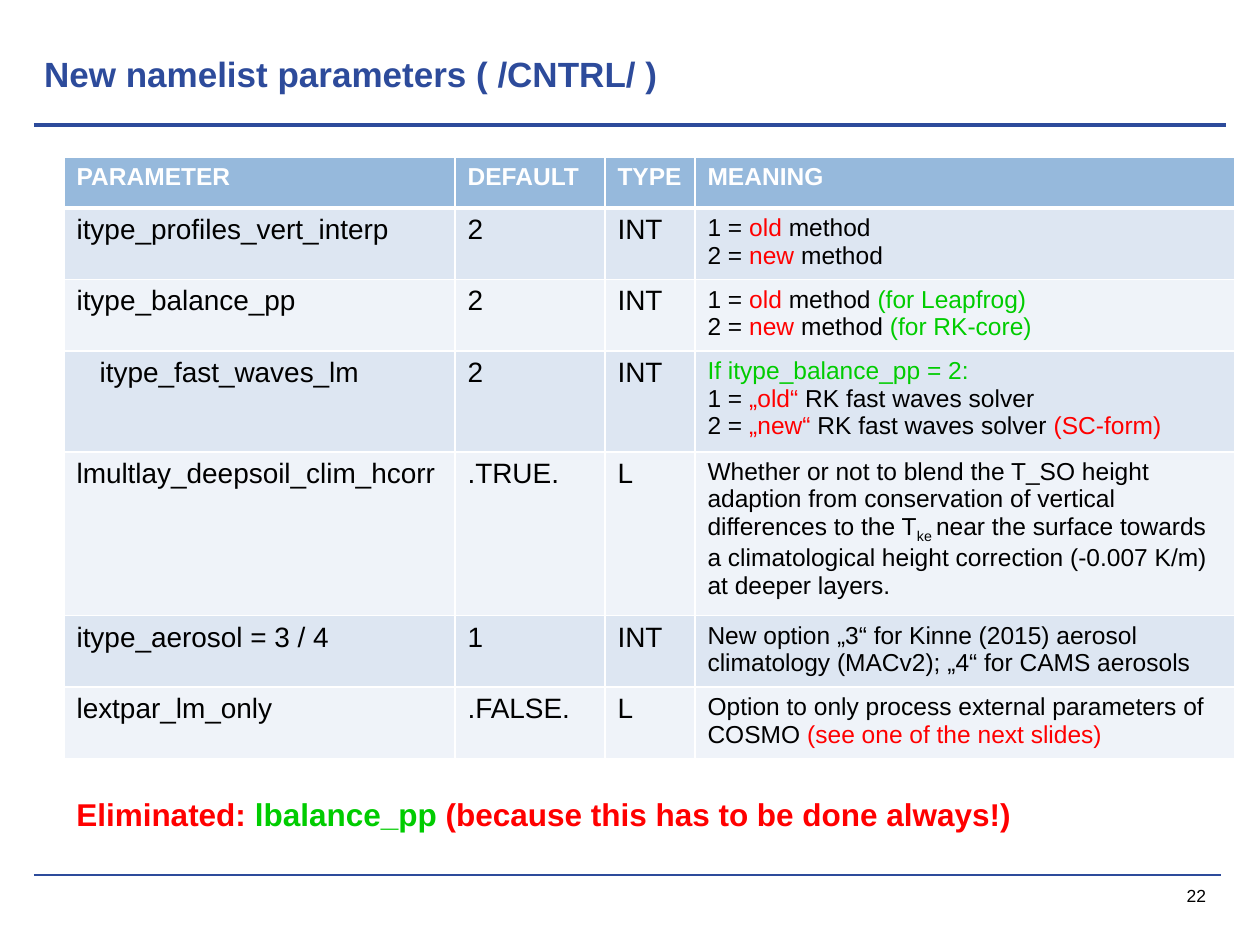
from dataclasses import dataclass
from typing import NamedTuple

from lxml.etree import SubElement
from pptx import Presentation
from pptx.dml.color import RGBColor
from pptx.enum.shapes import MSO_CONNECTOR
from pptx.enum.text import MSO_ANCHOR as Anchor, MSO_AUTO_SIZE as AutoSize, PP_ALIGN as Align
from pptx.oxml.ns import qn
from pptx.util import Emu, Pt

EMU_PER_PX = 914400 / 126
FONT = "Arial"
COLORS = {
    "navy": "2D4B9B",
    "black": "000000",
    "white": "FFFFFF",
    "red": "FF0000",
    "green": "00CC00",
    "header": "96B9DC",
    "odd": "DDE6F2",
    "even": "EFF3F9",
}


class Span(NamedTuple):
    text: str
    color: str = "black"
    subscript: bool = False


Line = list[Span]


@dataclass
class Rule:
    x1: int
    x2: int
    y: int
    width: float


@dataclass
class Label:
    left: int
    top: int
    width: int
    height: int
    spans: Line
    size: int
    bold: bool = True
    inset: bool = False
    anchor: Anchor = Anchor.TOP
    align: Align = Align.LEFT


@dataclass
class Parameter:
    name: str
    default: str
    kind: str
    meaning: list[Line]
    indent: int = 0


def px(length: int) -> Emu:
    return Emu(round(length * EMU_PER_PX))


def rgb(color: str) -> RGBColor:
    return RGBColor.from_string(COLORS[color])


def write_lines(frame, lines: list[Line], size: int, bold: bool = False,
                align: Align = Align.LEFT) -> None:
    for number, line in enumerate(lines):
        paragraph = frame.add_paragraph() if number else frame.paragraphs[0]
        paragraph.alignment = align
        for span in line:
            for part, text in enumerate(span.text.split("\n")):
                if part:
                    paragraph.add_line_break()
                run = paragraph.add_run()
                run.text = text
                run.font.name = FONT
                run.font.size = Pt(size)
                run.font.bold = bold
                run.font.color.rgb = rgb(span.color)
                if span.subscript:
                    run.font._element.set("baseline", "-25000")


def draw_rule(slide, rule: Rule) -> None:
    line = slide.shapes.add_connector(
        MSO_CONNECTOR.STRAIGHT, px(rule.x1), px(rule.y), px(rule.x2), px(rule.y))
    line.line.color.rgb = rgb("navy")
    line.line.width = Pt(rule.width)
    SubElement(line._element.spPr, qn("a:effectLst"))


def draw_label(slide, label: Label) -> None:
    box = slide.shapes.add_textbox(
        px(label.left), px(label.top), px(label.width), px(label.height))
    frame = box.text_frame
    frame.word_wrap = True
    frame.vertical_anchor = label.anchor
    if label.inset:
        frame.auto_size = AutoSize.SHAPE_TO_FIT_TEXT
    else:
        frame.margin_left = frame.margin_right = 0
        frame.margin_top = frame.margin_bottom = 0
    write_lines(frame, [label.spans], label.size, label.bold, label.align)


def style_cell(cell, fill: str, top: int = 1, bottom: int = 1) -> None:
    properties = cell._tc.get_or_add_tcPr()
    for side, width in (("L", 1), ("R", 1), ("T", top), ("B", bottom)):
        border = SubElement(properties, qn(f"a:ln{side}"), w=str(Pt(width)))
        SubElement(SubElement(border, qn("a:solidFill")), qn("a:srgbClr"), val=COLORS["white"])
    cell.fill.solid()
    cell.fill.fore_color.rgb = rgb(fill)


def draw_parameters(slide, headings: list[str], parameters: list[Parameter]) -> None:
    widths = [391, 150, 90, 540]
    table = slide.shapes.add_table(
        len(parameters) + 1, len(widths), px(64), px(157), px(sum(widths)), px(597)).table
    for column, width in zip(table.columns, widths):
        column.width = px(width)
    for row in table.rows:
        row.height = px(51)

    for column, heading in enumerate(headings):
        cell = table.cell(0, column)
        style_cell(cell, "header", bottom=3)
        write_lines(cell.text_frame, [[Span(heading, "white")]], 14, True)

    for row, parameter in enumerate(parameters, 1):
        entries = [[[Span(text)]] for text in (parameter.name, parameter.default, parameter.kind)]
        entries.append(parameter.meaning)
        for column, lines in enumerate(entries):
            cell = table.cell(row, column)
            style_cell(cell, "odd" if row % 2 else "even", top=3 if row == 1 else 1)
            write_lines(cell.text_frame, lines, 14 if column == 3 else 16)
        if parameter.indent:
            name = table.cell(row, 0).text_frame.paragraphs[0]
            name._p.get_or_add_pPr().set("marL", str(px(parameter.indent)))


def choice(number: int, word: str, rest: str, note: str = "", note_color: str = "green") -> Line:
    line = [Span(f"{number} = "), Span(word, "red"), Span(rest)]
    return line + [Span(note, note_color)] if note else line


RULES = [Rule(34, 1221, 875, 1.2), Rule(34, 1226, 125, 2)]
LABELS = [
    Label(1142, 880, 64, 30, [Span("22")], 10, bold=False,
          anchor=Anchor.MIDDLE, align=Align.RIGHT),
    Label(44, 35, 824, 59, [Span("New namelist parameters ( /CNTRL/ )", "navy")], 20,
          anchor=Anchor.BOTTOM),
    Label(64, 789, 1081, 50, [
        Span("Eliminated: ", "red"),
        Span("lbalance_pp", "green"),
        Span(" (because this has to be done always!)", "red"),
    ], 18, inset=True),
]
HEADINGS = ["PARAMETER", "DEFAULT", "TYPE", "MEANING"]
PARAMETERS = [
    Parameter("itype_profiles_vert_interp", "2", "INT", [
        choice(1, "old", " method"),
        choice(2, "new", " method"),
    ]),
    Parameter("itype_balance_pp", "2", "INT", [
        choice(1, "old", " method ", "(for Leapfrog)"),
        choice(2, "new", " method ", "(for RK-core)"),
    ]),
    Parameter("itype_fast_waves_lm", "2", "INT", [
        [Span("If itype_balance_pp = 2:", "green")],
        choice(1, "„old“ ", "RK fast waves solver"),
        choice(2, "„new“ ", "RK fast waves solver ", "(SC-form)", "red"),
    ], indent=23),
    Parameter("lmultlay_deepsoil_clim_hcorr", ".TRUE.", "L", [[
        Span("Whether or not to blend the T_SO height adaption from conservation "
             "of vertical differences to the T"),
        Span("ke ", subscript=True),
        Span("near the surface towards\na climatological height correction "
             "(-0.007 K/m) at deeper layers."),
    ]]),
    Parameter("itype_aerosol = 3 / 4", "1", "INT", [[
        Span("New option „3“ for Kinne (2015) aerosol climatology (MACv2); „4“ for CAMS aerosols"),
    ]]),
    Parameter("lextpar_lm_only", ".FALSE.", "L", [[
        Span("Option to only process external parameters of COSMO "),
        Span("(see one of the next slides)", "red"),
    ]]),
]


def main() -> None:
    deck = Presentation()
    deck.slide_width, deck.slide_height = px(1260), px(945)
    slide = deck.slides.add_slide(deck.slide_layouts[6])
    for rule in RULES:
        draw_rule(slide, rule)
    for label in LABELS:
        draw_label(slide, label)
    draw_parameters(slide, HEADINGS, PARAMETERS)
    deck.save("out.pptx")


if __name__ == "__main__":
    main()
